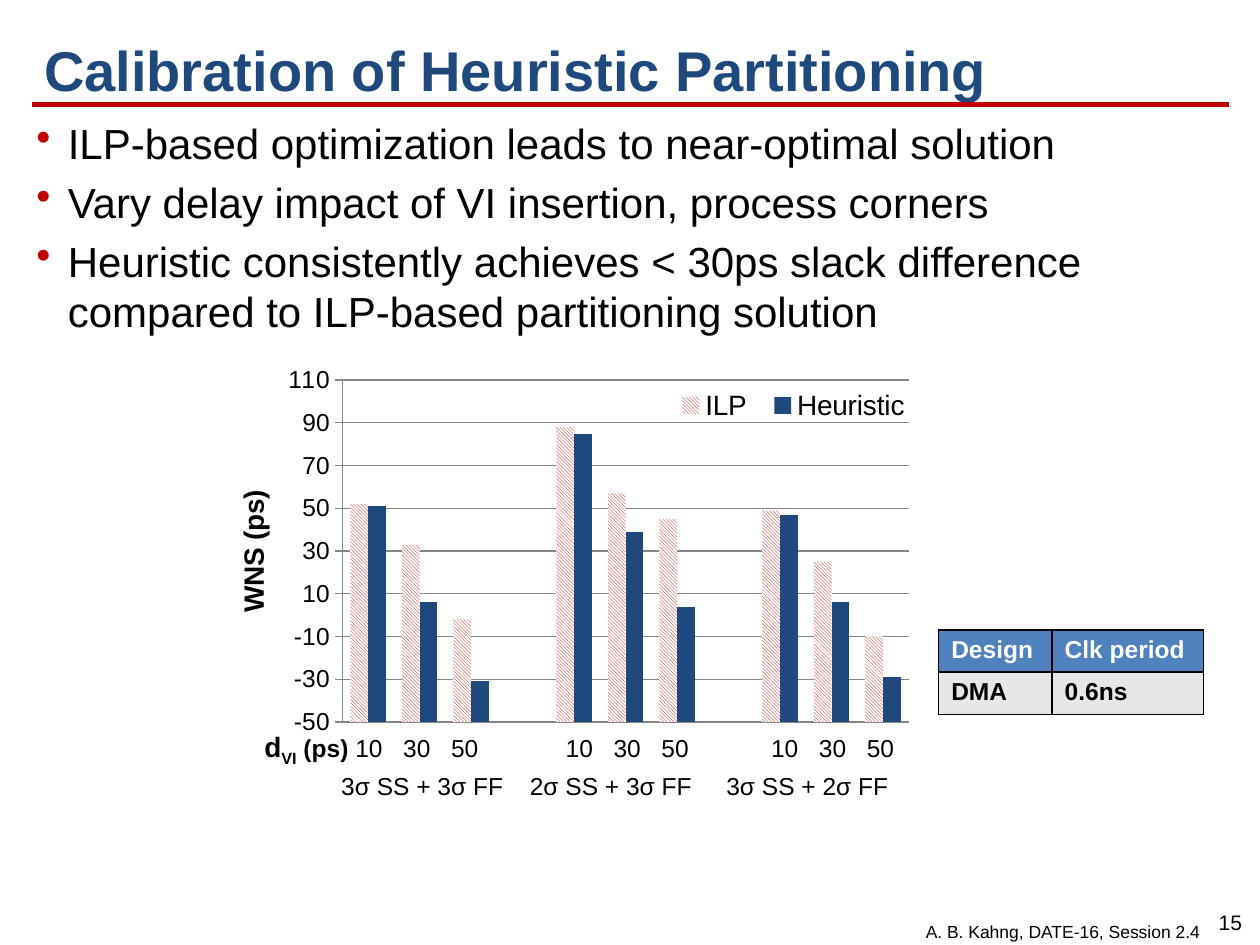
"""Build the slide on calibration of heuristic partitioning."""
from lxml import etree
from pptx import Presentation
from pptx.chart.data import CategoryChartData
from pptx.dml.color import RGBColor
from pptx.enum import chart as ch, dml, shapes, text
from pptx.oxml import parse_xml
from pptx.oxml.ns import nsdecls, qn
from pptx.util import Inches, Pt

NAVY = RGBColor(0x1F, 0x49, 0x7D)
RED = RGBColor(0xC0, 0x00, 0x00)
BLUE = RGBColor(0x4F, 0x81, 0xBD)
PALE = RGBColor(0xE7, 0xE7, 0xE7)
GRAY = RGBColor(0x86, 0x86, 0x86)
BLACK = RGBColor(0, 0, 0)
WHITE = RGBColor(255, 255, 255)
LEFT, MID, RIGHT = text.PP_ALIGN.LEFT, text.PP_ALIGN.CENTER, text.PP_ALIGN.RIGHT

TITLE = "Calibration of Heuristic Partitioning"
POINTS = [
    "ILP-based optimization leads to near-optimal solution",
    "Vary delay impact of VI insertion, process corners",
    "Heuristic consistently achieves < 30ps slack difference "
    "compared to ILP-based partitioning solution",
]
SERIES = {
    "ILP": (52, 33, -2, None, 88, 57, 45, None, 49, 25, -10),
    "Heuristic": (51, 6, -31, None, 85, 39, 4, None, 47, 6, -29),
}
DELAYS = ["10", "30", "50"]
CORNERS = ["3σ SS + 3σ FF", "2σ SS + 3σ FF", "3σ SS + 2σ FF"]
CELLS = [("Design", "Clk period"), ("DMA", "0.6ns")]
NOTES = [
    ("15", (9.56, 7.17, 0.41, 0.3), 12, MID),
    ("A. B. Kahng, DATE-16, Session 2.4", (5.62, 7.26, 4, 0.27), 10, RIGHT),
]


def style(font, size, color=BLACK, bold=False):
    font.name, font.size, font.bold = "Arial", Pt(size), bold
    font.color.rgb = color


def add_text(slide, box, lines, size, align=LEFT):
    frame = slide.shapes.add_textbox(*map(Inches, box)).text_frame
    frame.word_wrap = True
    frame.text = "\n".join(lines)
    for para in frame.paragraphs:
        para.alignment = align
        style(para.font, size)
    return frame


def add_tabs(para, stops):
    tabs = "".join(f'<a:tab pos="{Inches(s)}" algn="ctr"/>' for s in stops)
    props = para._p.get_or_add_pPr()
    props.insert(0, parse_xml(f'<a:tabLst {nsdecls("a")}>{tabs}</a:tabLst>'))


def add_bullet(para):
    props = para._p.get_or_add_pPr()
    props.set("marL", str(Inches(0.25)))
    props.set("indent", str(-Inches(0.25)))
    color = parse_xml(f'<a:buClr {nsdecls("a")}><a:srgbClr val="{RED}"/></a:buClr>')
    mark = parse_xml(f'<a:buChar {nsdecls("a")} char="•"/>')
    for node in (color, mark):
        props.find(qn("a:defRPr")).addprevious(node)


def layout(box, inner=False):
    target = '<c:layoutTarget val="inner"/>' if inner else ""
    modes = "".join(f'<c:{k}Mode val="edge"/>' for k in "xy")
    sizes = "".join(f'<c:{k} val="{v}"/>' for k, v in zip("xywh", box))
    return parse_xml(f'<c:layout {nsdecls("c")}><c:manualLayout>{target}{modes}{sizes}'
                     "</c:manualLayout></c:layout>")


def add_chart(slide):
    data = CategoryChartData()
    data.categories = [str(n) for n in range(1, 12)]
    for name, vals in SERIES.items():
        data.add_series(name, vals)
    box = map(Inches, (1.83, 2.85, 5.55, 3.35))
    chart = slide.shapes.add_chart(ch.XL_CHART_TYPE.COLUMN_CLUSTERED, *box, data).chart
    style(chart.font, 12)
    chart.has_title = False

    plot = chart.plots[0]
    plot.gap_width, plot.overlap, plot.vary_by_categories = 90, 0, False
    ilp, heur = (s.format.fill for s in plot.series)
    ilp.patterned()
    ilp.pattern = dml.MSO_PATTERN.DARK_DOWNWARD_DIAGONAL
    ilp.fore_color.rgb, ilp.back_color.rgb = RED, WHITE
    heur.solid()
    heur.fore_color.rgb = NAVY

    chart.category_axis.visible = False
    axis = chart.value_axis
    axis.minimum_scale, axis.maximum_scale, axis.major_unit = -50, 110, 20
    axis.crosses = ch.XL_AXIS_CROSSES.MINIMUM
    axis.major_tick_mark = ch.XL_TICK_MARK.OUTSIDE
    style(axis.tick_labels.font, 14)
    for line in (axis.format.line, axis.major_gridlines.format.line):
        line.color.rgb, line.width = GRAY, Pt(0.75)
    axis.axis_title.text_frame.text = "WNS (ps)"
    style(axis.axis_title.text_frame.paragraphs[0].font, 16, bold=True)

    chart.has_legend = True
    legend = chart.legend
    legend.position = ch.XL_LEGEND_POSITION.RIGHT
    legend.include_in_layout = True
    style(legend.font, 16)
    legend._element.find(qn("c:legendPos")).addnext(layout((0.62, 0.06, 0.37, 0.1)))
    area = chart._chartSpace.chart.plotArea
    for old in area.findall(qn("c:layout")):
        area.remove(old)
    area.insert(0, layout((0.16, 0.05, 0.81, 0.81), True))


def add_labels(slide):
    para = add_text(slide, (2.61, 6.07, 5.03, 0.38),
                    ["\t" + "\t".join(CORNERS)], 14).paragraphs[0]
    add_tabs(para, (0.64, 2.14, 3.7))
    para = add_text(slide, (2, 5.74, 5.54, 0.37), [""], 14).paragraphs[0]
    runs = [("d", 16, True), ("VI", 16, True), (" (ps)", 14, True),
            ("\t" + "\t".join(DELAYS * 3), 14, False)]
    for words, size, bold in runs:
        run = para.add_run()
        run.text = words
        style(run.font, size, bold=bold)
    para.runs[1].font._element.set("baseline", "-25000")
    add_tabs(para, [x + 0.38 * i for x in (0.83, 2.5, 4.13) for i in range(3)])


def add_table(slide):
    box = map(Inches, (7.45, 5, 2.1, 0.67))
    table = slide.shapes.add_table(2, 2, *box).table
    for col, width in zip(table.columns, (0.9, 1.2)):
        col.width = Inches(width)
    for r, row in enumerate(CELLS):
        for c, words in enumerate(row):
            cell = table.cell(r, c)
            cell.text = words
            style(cell.text_frame.paragraphs[0].font, 14, BLACK if r else WHITE, True)
            cell.fill.solid()
            cell.fill.fore_color.rgb = PALE if r else BLUE
            props = cell._tc.get_or_add_tcPr()
            for i, side in enumerate("LRTB"):
                props.insert(i, parse_xml(
                    f'<a:ln{side} {nsdecls("a")} w="{Pt(1)}"><a:solidFill>'
                    f'<a:srgbClr val="{BLACK}"/></a:solidFill></a:ln{side}>'))


def main():
    deck = Presentation()
    deck.slide_width, deck.slide_height = Inches(10), Inches(7.5)
    slide = deck.slides.add_slide(deck.slide_layouts[5])

    for words, box, size, align in NOTES:
        add_text(slide, box, [words], size, align)
    rule = slide.shapes.add_connector(
        shapes.MSO_CONNECTOR.STRAIGHT, *map(Inches, (0.25, 0.83, 9.75, 0.83)))
    rule.line.color.rgb, rule.line.width = RED, Pt(3)
    etree.SubElement(rule._element.spPr, qn("a:effectLst"))

    title = slide.shapes.title
    title.left, title.top, title.width, title.height = map(Inches, (0.25, 0.17, 9.5, 0.75))
    title.text_frame.text = TITLE
    title.text_frame.vertical_anchor = text.MSO_ANCHOR.MIDDLE
    para = title.text_frame.paragraphs[0]
    para.alignment = LEFT
    style(para.font, 32, NAVY, True)

    for para in add_text(slide, (0.19, 0.88, 9.66, 1.93), POINTS, 24).paragraphs:
        para.space_before = Pt(5)
        add_bullet(para)
    add_chart(slide)
    add_labels(slide)
    add_table(slide)
    deck.save("out.pptx")


if __name__ == "__main__":
    main()
